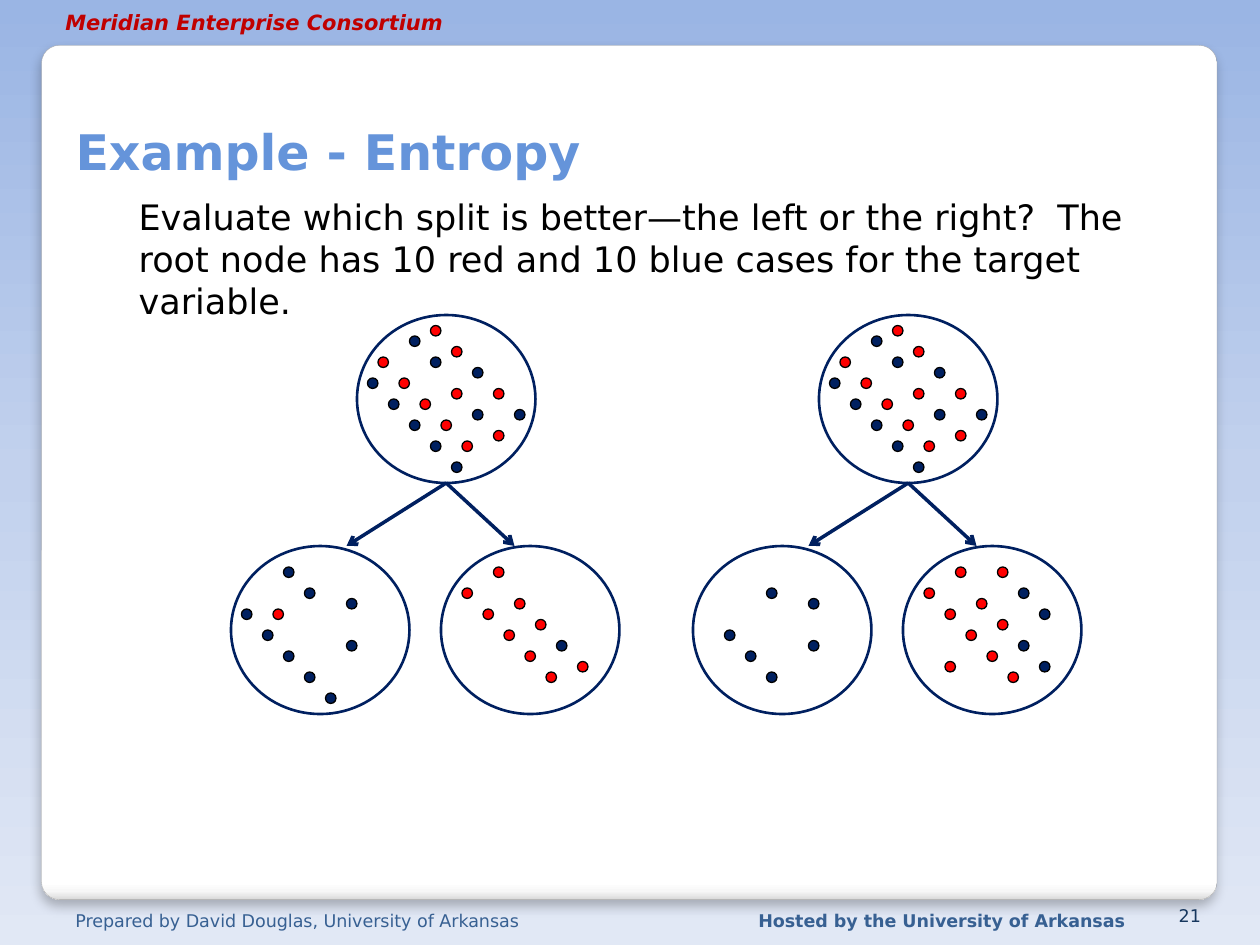
from dataclasses import dataclass

from lxml.etree import SubElement
from pptx import Presentation
from pptx.dml.color import RGBColor
from pptx.enum.shapes import MSO_CONNECTOR, MSO_SHAPE
from pptx.enum.text import MSO_ANCHOR, MSO_AUTO_SIZE, PP_ALIGN
from pptx.oxml.ns import qn
from pptx.util import Inches, Pt


@dataclass(frozen=True)
class Theme:
    font: str = "DejaVu Sans"
    navy: str = "002060"
    red: str = "FF0000"
    black: str = "000000"
    title: str = "6594DA"
    header: str = "C00000"
    footer: str = "376092"
    number: str = "17375E"
    card_edge: str = "A4A4A4"
    backdrop: tuple = ((0, "9AB5E4"), (50, "C2D1ED"), (100, "E1E8F5"))
    card: tuple = ((0, "FFFFFF"), (98, "FFFFFF"), (99, "F7F7F7"), (100, "DADADA"))
    title_size: float = 28
    body_size: float = 20
    header_size: float = 12
    footer_size: float = 10


@dataclass(frozen=True)
class Node:
    """A circle of cases; column, row and dots count grid steps."""
    column: float
    row: float
    blue: tuple
    red: tuple


THEME = Theme()
STEP = 1 / 12  # grid step in inches, also the diameter of a dot
NODE_WIDTH, NODE_HEIGHT = 17, 16
TREE_SHIFT = 44  # distance from the left tree to the right one


def grid(steps: float):
    return Inches(steps * STEP)


def color(value: str) -> RGBColor:
    return RGBColor.from_string(value)


def place(shape, left: float, top: float, width: float, height: float) -> None:
    shape.left, shape.top = Inches(left), Inches(top)
    shape.width, shape.height = Inches(width), Inches(height)


def write(box, text: str, *, size: float, tint: str, bold=False, italic=False,
          align=PP_ALIGN.LEFT, anchor=MSO_ANCHOR.TOP, wrap=True) -> None:
    frame = box.text_frame
    frame.word_wrap = wrap
    frame.auto_size = MSO_AUTO_SIZE.NONE
    frame.vertical_anchor = anchor
    para = frame.paragraphs[0]
    para.alignment = align
    para.space_before = Pt(0)
    span = para.add_run()
    span.text = text
    font = span.font
    font.name, font.size = THEME.font, Pt(size)
    font.bold, font.italic = bold, italic
    font.color.rgb = color(tint)


def add_label(page, text: str, at: tuple, **style) -> None:
    box = page.shapes.add_textbox(0, 0, 0, 0)
    place(box, *at)
    write(box, text, **style)


def set_gradient(fill, owner, stops: tuple) -> None:
    """Give a downward gradient with any number of stops."""
    fill.gradient()
    fill.gradient_angle = 270
    stop_list = next(owner.iter(qn("a:gsLst")))
    for old in list(stop_list):
        stop_list.remove(old)
    for percent, value in stops:
        stop = SubElement(stop_list, qn("a:gs"), pos=str(percent * 1000))
        SubElement(stop, qn("a:srgbClr"), val=value)


def add_card(page) -> None:
    card = page.shapes.add_shape(MSO_SHAPE.ROUNDED_RECTANGLE, 0, 0, 0, 0)
    place(card, 0.33, 0.36, 9.33, 6.78)
    card.adjustments[0] = 0.021
    set_gradient(card.fill, card._element, THEME.card)
    card.line.color.rgb = color(THEME.card_edge)
    card.line.width = Pt(0.16)
    card.shadow.inherit = False
    effects = card._element.spPr.find(qn("a:effectLst"))
    shadow = SubElement(effects, qn("a:outerShdw"), blurRad=str(Pt(6)),
                        dist=str(Pt(4)), dir="5400000", rotWithShape="0")
    tint = SubElement(shadow, qn("a:srgbClr"), val=THEME.black)
    SubElement(tint, qn("a:alpha"), val="25000")
    page.shapes._spTree.insert(2, card._element)  # behind the placeholders


def add_circle(page, column: float, row: float, width: float, height: float, *,
               edge: str, weight: float, fill: str | None = None) -> None:
    circle = page.shapes.add_shape(MSO_SHAPE.FLOWCHART_CONNECTOR, grid(column),
                                   grid(row), grid(width), grid(height))
    circle.shadow.inherit = False
    circle.line.color.rgb = color(edge)
    circle.line.width = Pt(weight)
    if fill:
        circle.fill.solid()
        circle.fill.fore_color.rgb = color(fill)
    else:
        circle.fill.background()


def add_node(page, node: Node, shift: float) -> None:
    left = node.column + shift
    add_circle(page, left, node.row, NODE_WIDTH, NODE_HEIGHT,
               edge=THEME.navy, weight=1.5)
    for dots, fill in ((node.blue, THEME.navy), (node.red, THEME.red)):
        for column, row in dots:
            add_circle(page, left + column, node.row + row, 1, 1,
                       edge=THEME.black, weight=0.75, fill=fill)


def add_arrow(page, start: tuple, end: tuple) -> None:
    arrow = page.shapes.add_connector(MSO_CONNECTOR.STRAIGHT,
                                      *map(grid, start + end))
    arrow.line.color.rgb = color(THEME.navy)
    arrow.line.width = Pt(2)
    SubElement(arrow.line._get_or_add_ln(), qn("a:tailEnd"), type="arrow")
    SubElement(arrow._element.spPr, qn("a:effectLst"))


def add_tree(page, nodes: tuple, shift: float) -> None:
    for node in nodes:
        add_node(page, node, shift)
    root = nodes[0]
    start = (root.column + NODE_WIDTH / 2 + shift, root.row + NODE_HEIGHT)
    for column in (49, 33):
        add_arrow(page, start, (column + shift, nodes[1].row))


# Cases in each node
ROOT = Node(34, 30,
            blue=((1, 6), (3, 8), (5, 10), (7, 12), (9, 14), (15, 9), (5, 2),
                  (11, 9), (7, 4), (11, 5)),
            red=((2, 4), (4, 6), (6, 8), (8, 10), (10, 12), (13, 11), (7, 1),
                 (9, 7), (9, 3), (13, 7)))
MOSTLY_RED = ((2, 4), (4, 6), (6, 8), (8, 10), (10, 12), (5, 2), (9, 7), (7, 5))
LEFT_TREE = (
    ROOT,
    Node(22, 52, red=((4, 6),),
         blue=((1, 6), (3, 8), (5, 10), (7, 12), (9, 14), (5, 2), (11, 9),
               (7, 4), (11, 5))),
    Node(42, 52, blue=((11, 9),), red=MOSTLY_RED + ((13, 11),)),
)
RIGHT_TREE = (
    ROOT,
    Node(22, 52, red=(),
         blue=((3, 8), (5, 10), (7, 12), (11, 9), (7, 4), (11, 5))),
    Node(42, 52, blue=((11, 9), (13, 11), (13, 6), (11, 4)),
         red=MOSTLY_RED + ((9, 2), (4, 11))),
)


def main() -> None:
    deck = Presentation()
    deck.slide_width, deck.slide_height = Inches(10), Inches(7.5)
    page = deck.slides.add_slide(deck.slide_layouts[1])

    # Backdrop
    set_gradient(page.background.fill, page._element, THEME.backdrop)
    add_card(page)

    # Title and question
    title, body = page.placeholders
    place(title, 0.5, 0.33, 8.95, 1.15)
    write(title, "Example - Entropy", size=THEME.title_size, tint=THEME.title,
          bold=True, anchor=MSO_ANCHOR.BOTTOM)
    place(body, 1, 1.5, 8.08, 1.11)
    write(body, "Evaluate which split is better—the left or the right?  The root "
          "node has 10 red and 10 blue cases for the target variable.",
          size=THEME.body_size, tint=THEME.black)
    properties = body.text_frame.paragraphs[0]._p.get_or_add_pPr()
    properties.set("marL", "0")
    properties.set("indent", "0")
    SubElement(properties, qn("a:buNone"))

    # Two candidate splits
    add_tree(page, LEFT_TREE, 0)
    add_tree(page, RIGHT_TREE, TREE_SHIFT)

    # Header and footer
    add_label(page, "Meridian Enterprise Consortium", (0.42, 0.03, 3.27, 0.3),
              size=THEME.header_size, tint=THEME.header, bold=True, italic=True,
              wrap=False)
    add_label(page, "Prepared by David Douglas, University of Arkansas",
              (0.5, 7.17, 4.46, 0.23), size=THEME.footer_size, tint=THEME.footer)
    add_label(page, "Hosted by the University of Arkansas",
              (5.92, 7.17, 3.33, 0.23), size=THEME.footer_size,
              tint=THEME.footer, bold=True)
    add_label(page, "21", (9.13, 7.17, 0.5, 0.23), size=THEME.footer_size,
              tint=THEME.number, align=PP_ALIGN.RIGHT, anchor=MSO_ANCHOR.BOTTOM)

    deck.save("out.pptx")


if __name__ == "__main__":
    main()
